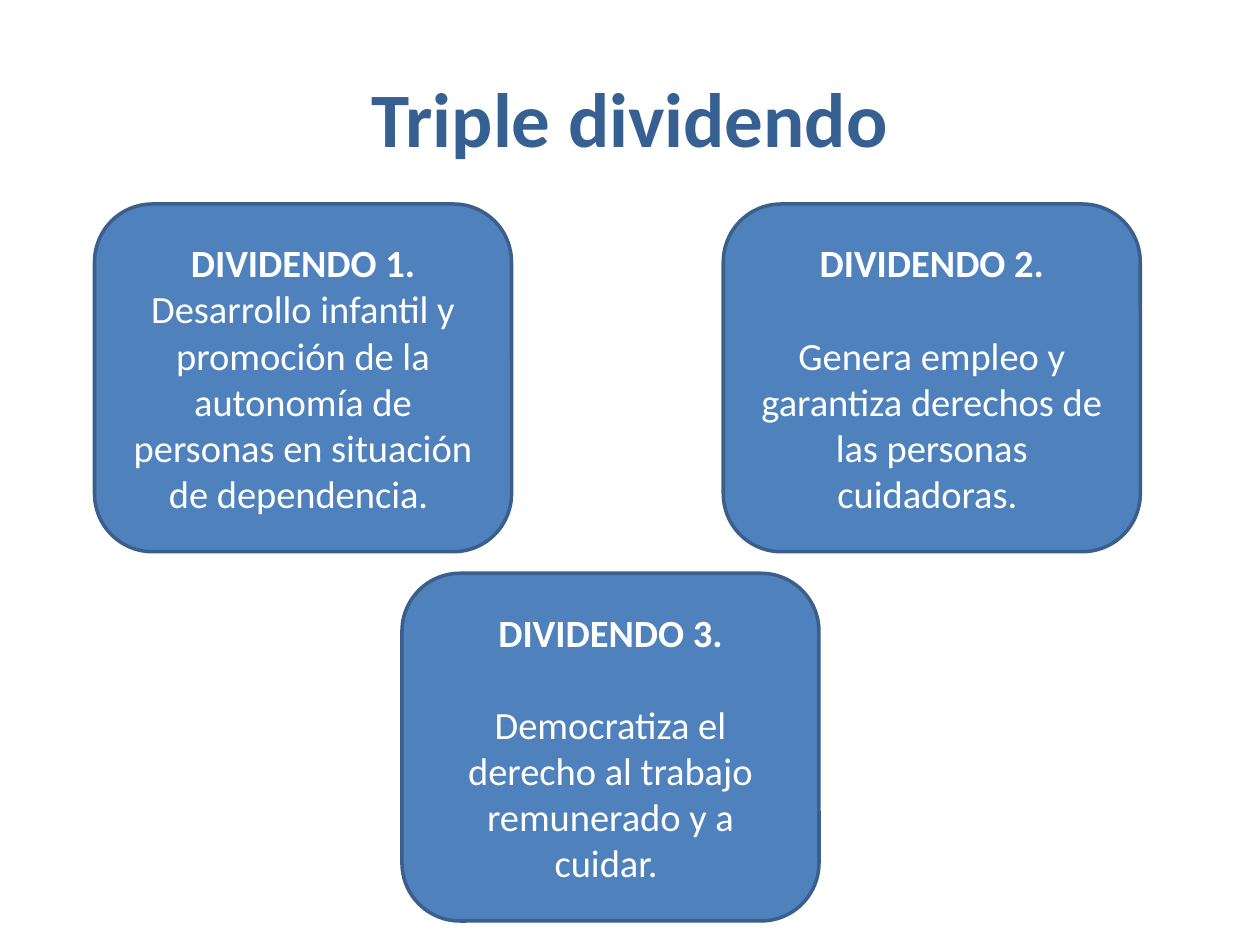
"""Build the "Triple dividendo" slide with three dividend cards."""
from pptx import Presentation
from pptx import util as u
from pptx.dml import color
from pptx.enum import shapes, text

COLORS = {"title": "376092", "card": "4F81BD", "border": "3A5F8C", "card_text": "FFFFFF"}
FONT = "Calibri"
CARD_WIDTH, CARD_HEIGHT = 238.3, 198.7
BODY_SIZE = 22
BLANK_LINE = 26.4
CARDS = [
    (54, 116.6, "DIVIDENDO 1.", 0,
     "Desarrollo infantil y promoción de la autonomía de personas en situación de dependencia. "),
    (413.3, 116.6, "DIVIDENDO 2.", BLANK_LINE,
     "Genera empleo y garantiza derechos de las personas cuidadoras. "),
    (229.7, 327.6, "DIVIDENDO 3.", BLANK_LINE,
     "Democratiza el derecho al trabajo remunerado y a cuidar. "),
]


def rgb(name):
    """Return the named palette colour."""
    return color.RGBColor.from_string(COLORS[name])


def prepare_frame(shape):
    """Wrap and vertically centre the text of a shape."""
    frame = shape.text_frame
    frame.word_wrap = True
    frame.vertical_anchor = text.MSO_ANCHOR.MIDDLE
    return frame


def write_paragraph(paragraph, words, size, color_name, bold=False, gap=0):
    """Fill a centred paragraph with one formatted run."""
    paragraph.alignment = text.PP_ALIGN.CENTER
    paragraph.space_before = u.Pt(gap)
    run = paragraph.add_run()
    run.text = words
    run.font.name = FONT
    run.font.size = u.Pt(size)
    run.font.bold = bold
    run.font.color.rgb = rgb(color_name)


def add_title(slide, words):
    """Add the slide heading."""
    shape = slide.shapes.add_textbox(u.Pt(36), u.Pt(21.6), u.Pt(648), u.Pt(90))
    write_paragraph(prepare_frame(shape).paragraphs[0], words, 44, "title", bold=True)


def add_card(slide, left, top, heading, gap, body):
    """Add a rounded card with a bold heading and a body text."""
    shape = slide.shapes.add_shape(
        shapes.MSO_SHAPE.ROUNDED_RECTANGLE,
        u.Pt(left), u.Pt(top), u.Pt(CARD_WIDTH), u.Pt(CARD_HEIGHT))
    shape.shadow.inherit = False
    shape.fill.solid()
    shape.fill.fore_color.rgb = rgb("card")
    shape.line.color.rgb = rgb("border")
    shape.line.width = u.Pt(2)
    frame = prepare_frame(shape)
    write_paragraph(frame.paragraphs[0], heading, BODY_SIZE, "card_text", bold=True)
    write_paragraph(frame.add_paragraph(), body, BODY_SIZE, "card_text", gap=gap)


def main():
    """Create and save the presentation."""
    presentation = Presentation()
    presentation.slide_width = u.Pt(720)
    presentation.slide_height = u.Pt(540)
    slide = presentation.slides.add_slide(presentation.slide_layouts[6])
    add_title(slide, "Triple dividendo")
    for card in CARDS:
        add_card(slide, *card)
    presentation.save("out.pptx")


if __name__ == "__main__":
    main()
